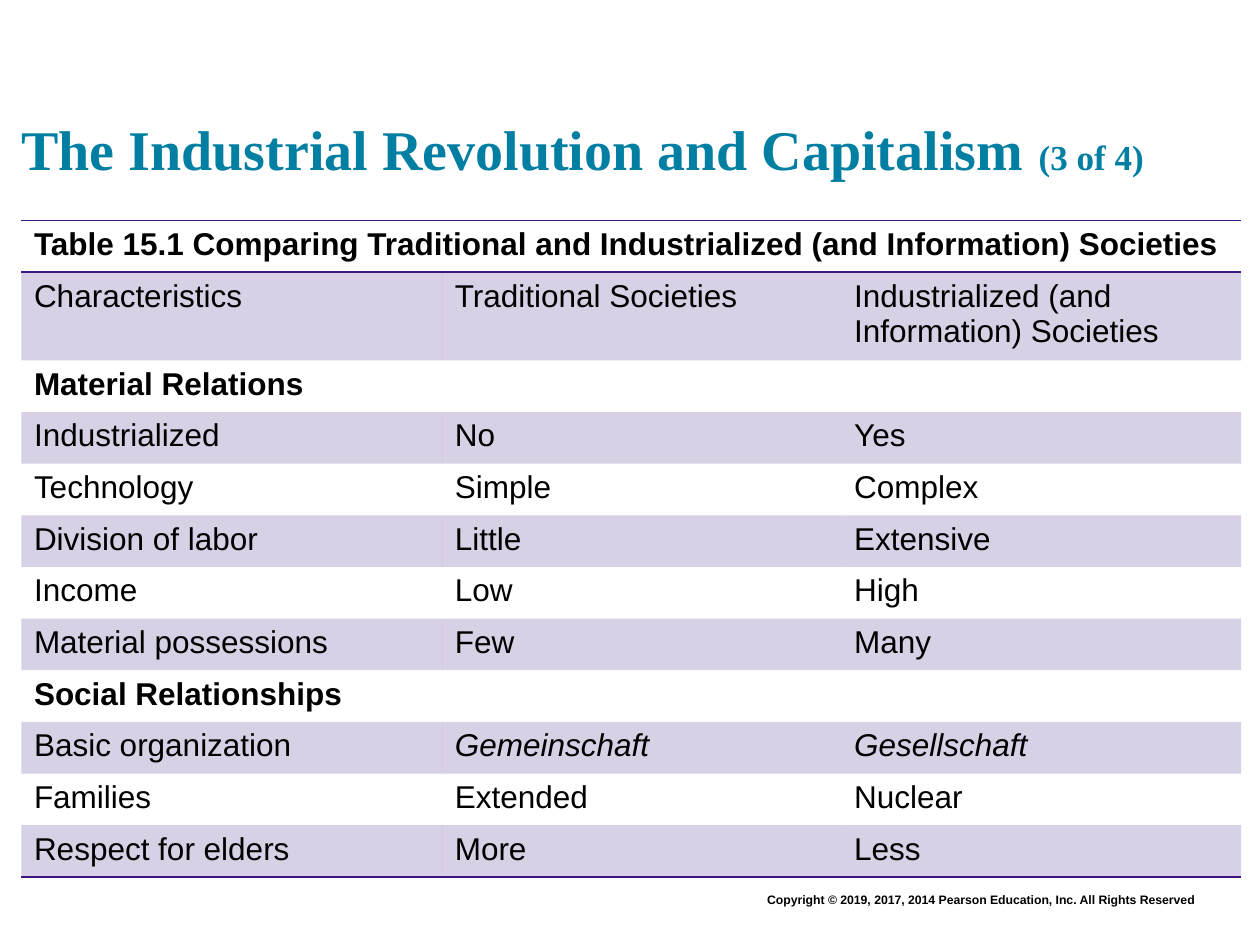
from lxml import etree
from pptx import Presentation
from pptx.dml.color import RGBColor
from pptx.enum.text import MSO_ANCHOR, MSO_AUTO_SIZE, PP_ALIGN
from pptx.oxml.ns import qn
from pptx.util import Inches, Pt

BOTTOM = MSO_ANCHOR.BOTTOM
FIT_SHAPE = MSO_AUTO_SIZE.SHAPE_TO_FIT_TEXT
RIGHT = PP_ALIGN.RIGHT

TEAL = RGBColor(0x00, 0x7F, 0xA3)
PURPLE = RGBColor(0x3C, 0x15, 0x81)
BLACK = RGBColor(0x00, 0x00, 0x00)
BAND_ALPHA = 20
PLAIN_TABLE_STYLE = "{2D5ABB26-0587-4C30-8999-92F81FD0307C}"

CAPTION = "Table 15.1 Comparing Traditional and Industrialized (and Information) Societies"
ROWS = [
    (CAPTION,),
    ("Characteristics", "Traditional Societies", "Industrialized (and Information) Societies"),
    ("Material Relations",),
    ("Industrialized", "No", "Yes"),
    ("Technology", "Simple", "Complex"),
    ("Division of labor", "Little", "Extensive"),
    ("Income", "Low", "High"),
    ("Material possessions", "Few", "Many"),
    ("Social Relationships",),
    ("Basic organization", "Gemeinschaft", "Gesellschaft"),
    ("Families", "Extended", "Nuclear"),
    ("Respect for elders", "More", "Less"),
]
ITALIC_TERMS = {"Gemeinschaft", "Gesellschaft"}
COLUMN_WIDTHS = (3.34, 3.17, 3.17)
ROW_HEIGHT = 0.41


def add_run(paragraph, text, size, font_name, color, bold=False, italic=False):
    run = paragraph.add_run()
    run.text = text
    font = run.font
    font.size, font.name = Pt(size), font_name
    font.bold, font.italic = bold, italic
    font.color.rgb = color


def add_title(slide, left, top, width, height):
    frame = slide.shapes.add_textbox(left, top, width, height).text_frame
    frame.word_wrap = True
    frame.vertical_anchor = BOTTOM
    frame.margin_left = frame.margin_right = frame.margin_top = frame.margin_bottom = 0
    heading = frame.paragraphs[0]
    add_run(heading, "The Industrial Revolution and Capitalism ", 32, "Times New Roman", TEAL, bold=True)
    add_run(heading, "(3 of 4)", 20, "Times New Roman", TEAL, bold=True)


def add_copyright(slide, left, top, width, height):
    frame = slide.shapes.add_textbox(left, top, width, height).text_frame
    frame.word_wrap = True
    frame.auto_size = FIT_SHAPE
    notice = frame.paragraphs[0]
    notice.alignment = RIGHT
    add_run(notice, "Copyright © 2019, 2017, 2014 Pearson Education, Inc. All Rights Reserved",
            7, "Arial", BLACK, bold=True)


def fill_band(cell):
    cell.fill.solid()
    cell.fill.fore_color.rgb = PURPLE
    color = cell._tc.tcPr.find(qn("a:solidFill"))[0]
    etree.SubElement(color, qn("a:alpha"), val=str(BAND_ALPHA * 1000))


def rule_cell(cell, sides):
    """Draw a thin line on the given sides ("T", "B"), ahead of the fill element."""
    properties = cell._tc.get_or_add_tcPr()
    for position, side in enumerate(sides):
        line = etree.Element(qn(f"a:ln{side}"), w=str(Pt(1)))
        solid = etree.SubElement(line, qn("a:solidFill"))
        etree.SubElement(solid, qn("a:srgbClr"), val=str(PURPLE))
        properties.insert(position, line)


def add_comparison_table(slide, left, top, width):
    table = slide.shapes.add_table(len(ROWS), len(COLUMN_WIDTHS), left, top, width,
                                   Inches(ROW_HEIGHT * len(ROWS))).table
    table._tbl.tblPr.find(qn("a:tableStyleId")).text = PLAIN_TABLE_STYLE
    for column, column_width in zip(table.columns, COLUMN_WIDTHS):
        column.width = Inches(column_width)
    rules = {0: "TB", len(ROWS) - 1: "B"}
    for row_index, labels in enumerate(ROWS):
        table.rows[row_index].height = Inches(ROW_HEIGHT)
        is_heading = len(labels) == 1
        for column_index in range(len(COLUMN_WIDTHS)):
            cell = table.cell(row_index, column_index)
            if row_index % 2:
                fill_band(cell)
            else:
                cell.fill.background()
            rule_cell(cell, rules.get(row_index, ""))
            if column_index < len(labels):
                label = labels[column_index]
                add_run(cell.text_frame.paragraphs[0], label, 18, "Arial", BLACK,
                        bold=is_heading, italic=label in ITALIC_TERMS)
    table.cell(0, 0).merge(table.cell(0, len(COLUMN_WIDTHS) - 1))


def main():
    deck = Presentation()
    deck.slide_width, deck.slide_height = Inches(10), Inches(7.5)
    slide = deck.slides.add_slide(deck.slide_layouts[6])
    add_copyright(slide, Inches(1.75), Inches(7.03), Inches(7.83), Inches(0.22))
    add_title(slide, Inches(0.17), Inches(0.24), Inches(9.67), Inches(1.2))
    add_comparison_table(slide, Inches(0.17), Inches(1.75), Inches(9.67))
    deck.save("out.pptx")


if __name__ == "__main__":
    main()
